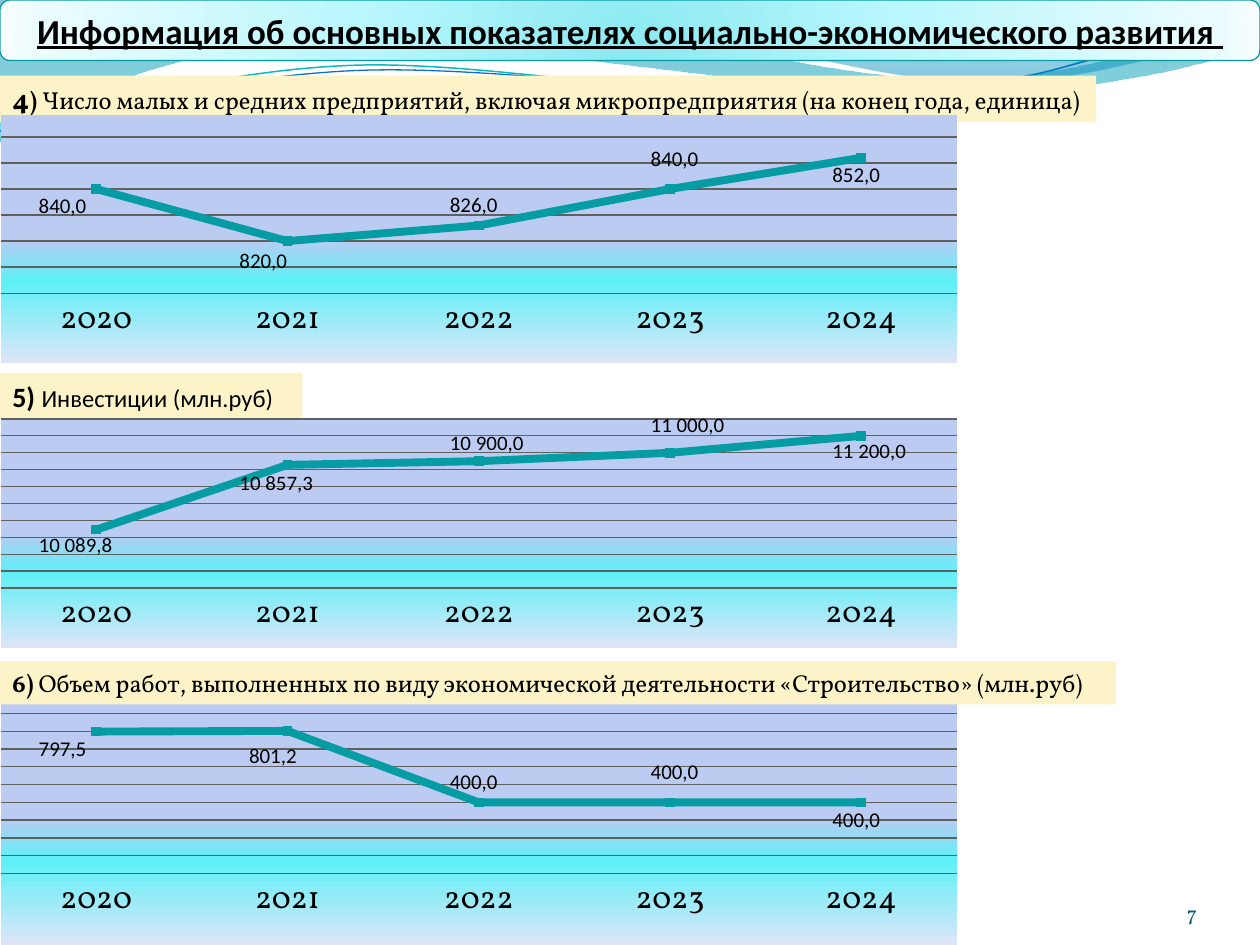
from math import cos, radians, sin

from lxml import etree
from pptx import Presentation
from pptx import util as u
from pptx.chart.data import CategoryChartData
from pptx.dml.color import RGBColor
from pptx.enum import chart as ch, shapes, text
from pptx.oxml import parse_xml
from pptx.oxml.ns import nsdecls, qn

HEX = {"ink": "000000", "teal": "069CA3", "cream": "FDF3C9", "grid": "606060",
       "page": "045D75", "aqua": "0AB8BF", "blue": "0F6FC6"}
LINEAR = '<a:lin ang="5400000" scaled="0"/>'
RADIAL = ('<a:path path="circle"><a:fillToRect l="50000" t="130000" '
          'r="50000" b="-30000"/></a:path>')
# Gradient stops: position %, colour, opacity %
PANEL = [(50, "BBCBF2", 100), (67, "5EF0F7", 100), (100, "DEE5F8", 100)]
BANNER = [(0, "8BE9F1", 100), (43, "B9F7FD", 100),
          (93, "EAFCFE", 100), (100, "F8FEFF", 100)]

# Each step holds one point (line) or three points (Bezier curve)
BANDS = [
    ([(0, 0), (4.4, -0.01), (4.76, 0.17, 6.64, 0.63, 7.58, 0.63),
      (8.53, 0.63, 9.58, 0.26, 10, 0.09), (10.01, 0.36),
      (9.83, 0.44, 8.7, 0.76, 7.46, 0.75), (6.22, 0.75, 3.82, 0.28, 2.57, 0.34),
      (1.29, 0.36, 0.46, 0.83, -0.01, 1.13)],
     [(0, "0074A1", 45), (100, "00C6CF", 55)]),
    ([(4.79, -0.01), (5.09, 0.11, 6.82, 0.62, 7.69, 0.65),
      (8.56, 0.69, 9.61, 0.32, 10, 0.21), (10, 0)],
     [(0, "00A1A9", 30), (80, "008BBF", 45)]),
]
TILT = -2.7
WAVES = [
    ([(0, 1.11), (0.48, 0.93, 1.58, 0.57, 2.77, 0.52),
      (3.95, 0.47, 5.93, 0.89, 7.13, 0.8),
      (8.33, 0.71, 9.38, 0.15, 9.98, -0.02)], "aqua", 0.85),
    ([(0, 1.04), (0.47, 0.96, 1.64, 0.61, 2.83, 0.56),
      (4.03, 0.51, 5.97, 0.84, 7.17, 0.75),
      (8.36, 0.67, 9.41, 0.21, 10, 0.06)], "blue", 0.75),
]

TITLE = "Информация об основных показателях социально-экономического развития "
YEARS = ["2020", "2021", "2022", "2023", "2024"]
# Label shift from each point, as shares of the chart's width and height
SHIFT = [(-0.07, 0.07), (-0.06, 0.08), (-0.04, -0.08), (-0.03, -0.12), (-0.04, 0.07)]
# top, height, plot top, plot height, axis (low, high, step), values
FIRMS = (0.91, 1.97, 0.09, 0.63, (800, 860, 10), [840, 820, 826, 840, 852])
INVEST = (3.28, 1.86, 0, 0.74, (9400, 11400, 200),
          [10089.8, 10857.3, 10900, 11000, 11200])
BUILD = (5.48, 2.02, 0.09, 0.63, (0, 900, 100), [797.5, 801.2, 400, 400, 400])
# top, width, height, font, runs (text, size, bold)
HEADS = [
    (2.96, 2.4, 0.37, "Calibri",
     [("5) ", 16, True), ("Инвестиции (млн.руб)", 14, False)]),
    (0.6, 8.7, 0.37, "Vollkorn",
     [("4", 16, True), (") ", 14, True),
      ("Число малых и средних предприятий, включая микропредприятия "
       "(на конец года, единица)", 14, False)]),
    (5.25, 8.86, 0.34, "Vollkorn",
     [("6) ", 14, True),
      ("Объем работ, выполненных по виду экономической деятельности "
       "«Строительство» (млн.руб) ", 14, False)]),
]

prs = Presentation()
prs.slide_width, prs.slide_height = u.Inches(10), u.Inches(7.5)
slide = prs.slides.add_slide(prs.slide_layouts[6])


def rgb(name):
    return RGBColor.from_string(HEX[name])


def blend(stops, way=LINEAR):
    """Gradient fill element."""
    marks = "".join(
        f'<a:gs pos="{pos * 1000}"><a:srgbClr val="{tint}">'
        f'<a:alpha val="{alpha * 1000}"/></a:srgbClr></a:gs>'
        for pos, tint, alpha in stops)
    return parse_xml(f'<a:gradFill {nsdecls("a")} rotWithShape="1">'
                     f'<a:gsLst>{marks}</a:gsLst>{way}</a:gradFill>')


def level(step):
    """Turn a step's points back by TILT about the middle of the waves."""
    c, s = cos(radians(TILT)), sin(radians(TILT))
    out = []
    for x, y in zip(step[::2], step[1::2]):
        x, y = x - 5, y - 0.58
        out += [5 + x * c + y * s, 0.58 - x * s + y * c]
    return tuple(out)


def trace(steps, closed):
    """Freeform whose three-point steps become Bezier curves."""
    dots = [(u.Inches(x), u.Inches(y)) for step in steps
            for x, y in zip(step[::2], step[1::2])]
    pen = slide.shapes.build_freeform(*dots[0])
    pen.add_line_segments(dots[1:], close=closed)
    shape = pen.convert_to_shape()
    shape.shadow.inherit = False
    lines = iter(shape._element.findall(".//" + qn("a:lnTo")))
    for step in steps[1:]:
        first = next(lines)
        if len(step) == 6:
            first.tag = qn("a:cubicBezTo")
            for _ in range(2):
                extra = next(lines)
                first.append(extra[0])
                extra.getparent().remove(extra)
    return shape


def write(para, words, font, size, bold=False, tint="ink", under=False):
    run = para.add_run()
    run.text = words
    f = run.font
    f.name, f.size, f.bold, f.underline = font, u.Pt(size), bold, under
    f.color.rgb = rgb(tint)


def box(kind, left, top, wide, high, align):
    shape = slide.shapes.add_shape(kind, *map(u.Inches, (left, top, wide, high)))
    shape.shadow.inherit = False
    shape.line.fill.background()
    frame = shape.text_frame
    frame.word_wrap, frame.vertical_anchor = True, text.MSO_ANCHOR.TOP
    frame.paragraphs[0].alignment = align
    return shape


def layout(x, y, size=""):
    return parse_xml(f'<c:layout {nsdecls("c")}><c:manualLayout>{size}'
                     f'<c:x val="{x}"/><c:y val="{y}"/>'
                     '</c:manualLayout></c:layout>')


def plot(top, high, inset, share, scale, vals, shift=SHIFT):
    data = CategoryChartData(number_format="#,##0.0")
    data.categories = YEARS
    data.add_series("Series 1", vals)
    chart = slide.shapes.add_chart(
        ch.XL_CHART_TYPE.LINE_MARKERS, u.Inches(0), u.Inches(top),
        u.Inches(7.6), u.Inches(high), data).chart
    chart.has_legend = chart.has_title = False
    chart.font.name, chart.font.size = "Vollkorn", u.Pt(18)
    chart.font.color.rgb = rgb("ink")
    years, axis = chart.category_axis, chart.value_axis
    years.major_tick_mark = ch.XL_TICK_MARK.NONE
    axis.minimum_scale, axis.maximum_scale, axis.major_unit = scale
    axis.visible = False
    for line in (years.format.line, axis.major_gridlines.format.line):
        line.color.rgb, line.width = rgb("grid"), u.Pt(0.75)

    root = chart.element
    back = parse_xml(f'<c:spPr {nsdecls("c", "a")}><a:ln><a:noFill/></a:ln></c:spPr>')
    back.insert(0, blend(PANEL))
    root.find(qn("c:chart")).addnext(back)
    area = root.find(".//" + qn("c:plotArea"))
    for old in area.findall(qn("c:layout")):
        area.remove(old)
    spot = layout(0, inset, '<c:layoutTarget val="inner"/>'
                  '<c:xMode val="edge"/><c:yMode val="edge"/>')
    for tag, val in (("w", 1), ("h", share)):
        etree.SubElement(spot[0], qn("c:" + tag)).set("val", str(val))
    area.insert(0, spot)

    series = chart.plots[0].series[0]
    series.smooth = False
    series.format.line.color.rgb, series.format.line.width = rgb("teal"), u.Pt(4.5)
    mark = series.marker
    mark.style, mark.size = ch.XL_MARKER_STYLE.SQUARE, 5
    mark.format.fill.solid()
    mark.format.fill.fore_color.rgb = mark.format.line.color.rgb = rgb("teal")
    labels = series.data_labels
    labels.show_value = True
    labels.number_format, labels.number_format_is_linked = "#,##0.0", False
    labels.font.name, labels.font.size = "Arial", u.Pt(12)
    for i, (val, (dx, dy)) in enumerate(zip(vals, shift)):
        label = series.points[i].data_label
        words = f"{val:,.1f}".replace(",", " ").replace(".", ",")
        write(label.text_frame.paragraphs[0], words, "Calibri", 12)
        label.position = ch.XL_LABEL_POSITION.RIGHT
        tag = series._element.findall(".//" + qn("c:dLbl"))[i]
        tag.insert(1, layout(dx, dy))
    for lead in root.findall(".//" + qn("c:showLeaderLines")):
        lead.set("val", "0")


for steps, stops in BANDS:
    band = trace(steps, True)
    band._element.spPr.find(qn("a:custGeom")).addnext(blend(stops))
    band.line.fill.background()
for steps, tint, width in WAVES:
    wave = trace([level(step) for step in steps], False)
    wave.rotation = TILT
    wave.fill.background()
    wave.line.color.rgb, wave.line.width = rgb(tint), u.Pt(width)

plot(*BUILD, [SHIFT[0], (-0.05, 0.1), *SHIFT[2:]])

banner = box(shapes.MSO_SHAPE.ROUNDED_RECTANGLE, 0, 0, 10, 0.48, text.PP_ALIGN.CENTER)
banner._element.spPr.find(qn("a:prstGeom")).addnext(blend(BANNER, RADIAL))
banner.line.color.rgb, banner.line.width = rgb("teal"), u.Pt(0.75)
write(banner.text_frame.paragraphs[0], TITLE, "Calibri", 20, True, under=True)

for top, wide, high, font, runs in HEADS:
    head = box(shapes.MSO_SHAPE.RECTANGLE, 0, top, wide, high, text.PP_ALIGN.LEFT)
    head.fill.solid()
    head.fill.fore_color.rgb = rgb("cream")
    for words, size, bold in runs:
        write(head.text_frame.paragraphs[0], words, font, size, bold)

plot(*FIRMS)
plot(*INVEST)

page = slide.shapes.add_textbox(*map(u.Inches, (8.67, 6.95, 0.83, 0.4))).text_frame
page.word_wrap, page.vertical_anchor = True, text.MSO_ANCHOR.BOTTOM
page.margin_left = page.margin_right = page.margin_top = page.margin_bottom = 0
page.paragraphs[0].alignment = text.PP_ALIGN.RIGHT
write(page.paragraphs[0], "7", "Vollkorn", 12, tint="page")

prs.save("out.pptx")
